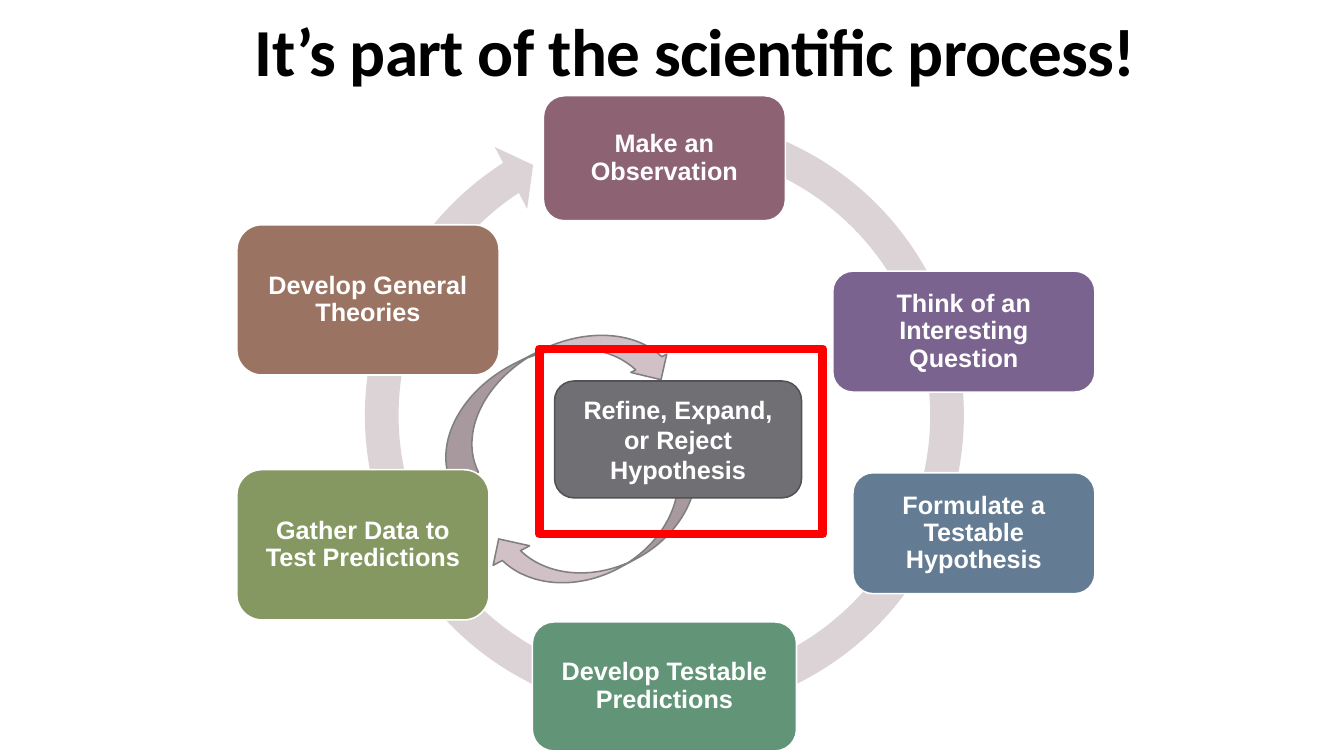
from pptx import Presentation
from pptx.dml.color import RGBColor
from pptx.enum.shapes import MSO_SHAPE
from pptx.enum.text import MSO_ANCHOR, PP_ALIGN
from pptx.util import Inches, Pt

WHITE = RGBColor(0xFF, 0xFF, 0xFF)
BLACK = RGBColor(0x00, 0x00, 0x00)
RED = RGBColor(0xFF, 0x00, 0x00)
GRAY = RGBColor(0x80, 0x80, 0x80)
SLATE = RGBColor(0x6F, 0x6F, 0x74)
DARK = RGBColor(0x52, 0x52, 0x56)
PINK = RGBColor(0xD2, 0xC0, 0xC7)
PALE = RGBColor(0xDB, 0xD3, 0xD6)
MAUVE = RGBColor(0x8D, 0x63, 0x74)
PURPLE = RGBColor(0x7B, 0x63, 0x90)
BLUE = RGBColor(0x63, 0x7C, 0x93)
GREEN = RGBColor(0x62, 0x95, 0x78)
OLIVE = RGBColor(0x85, 0x98, 0x62)
BROWN = RGBColor(0x9B, 0x73, 0x62)

STEPS = [
    ("Make an Observation", (5.39, 0.95, 2.4, 1.24), MAUVE),
    ("Think of an Interesting Question", (8.26, 2.69, 2.6, 1.2), PURPLE),
    ("Formulate a Testable Hypothesis", (8.46, 4.69, 2.4, 1.2), BLUE),
    ("Develop Testable Predictions", (5.28, 6.17, 2.62, 1.28), GREEN),
    ("Gather Data to Test Predictions", (2.35, 4.66, 2.5, 1.49), OLIVE),
    ("Develop General Theories", (2.35, 2.23, 2.6, 1.49), BROWN),
]


def add_form(slide, kind, box, fill=None, line=None, width=1.1, turn=0, adjust=()):
    """Add a preset shape; without a fill or line colour that part is clear."""
    form = slide.shapes.add_shape(kind, *map(Inches, box))
    form.shadow.inherit = False
    form.rotation = turn
    for i, value in enumerate(adjust):
        form.adjustments[i] = value
    if fill is None:
        form.fill.background()
    else:
        form.fill.solid()
        form.fill.fore_color.rgb = fill
    if line is None:
        form.line.fill.background()
    else:
        form.line.color.rgb = line
        form.line.width = Pt(width)
    return form


def set_text(form, text, font, size, color, anchor, spacing):
    frame = form.text_frame
    frame.word_wrap = True
    frame.vertical_anchor = anchor
    para = frame.paragraphs[0]
    para.text = text
    para.alignment = PP_ALIGN.CENTER
    para.line_spacing = spacing
    para.font.name = font
    para.font.size = Pt(size)
    para.font.bold = True
    para.font.color.rgb = color
    return para


def add_box(slide, text, box, fill, line, spacing):
    form = add_form(slide, MSO_SHAPE.ROUNDED_RECTANGLE, box, fill, line)
    set_text(form, text, "Arial", 18, WHITE, MSO_ANCHOR.MIDDLE, spacing)


def add_title(slide, text):
    box = slide.shapes.add_textbox(Inches(0.8), 0, Inches(12.19), Inches(0.95))
    para = set_text(box, text, "Calibri", 48, BLACK, MSO_ANCHOR.BOTTOM, 0.9)
    para.runs[0].font._element.set("spc", "-50")


def main():
    deck = Presentation()
    deck.slide_width = Inches(13.33)
    deck.slide_height = Inches(7.5)
    slide = deck.slides.add_slide(deck.slide_layouts[6])

    add_form(slide, MSO_SHAPE.CURVED_DOWN_ARROW, (4.17, 3.49, 2.52, 0.8),
             PINK, GRAY, turn=333.1, adjust=(0.363, 0.5, 0.25))
    add_form(slide, MSO_SHAPE.CIRCULAR_ARROW, (3.44, 0.97, 6.3, 6.3),
             PALE, adjust=(0.053, 3.126, 142.276, 171.273, 0.055))
    for text, box, fill in STEPS:
        add_box(slide, text, box, fill, WHITE, 0.9)
    add_form(slide, MSO_SHAPE.CURVED_DOWN_ARROW, (4.82, 4.84, 2.34, 0.82),
             PINK, GRAY, turn=151.7)
    add_box(slide, "Refine, Expand, or Reject Hypothesis",
            (5.5, 3.78, 2.45, 1.16), SLATE, DARK, 1.0)
    add_title(slide, "It’s part of the scientific process!")
    add_form(slide, MSO_SHAPE.RECTANGLE, (5.35, 3.46, 2.81, 1.84), line=RED, width=6)

    deck.save("out.pptx")


if __name__ == "__main__":
    main()
